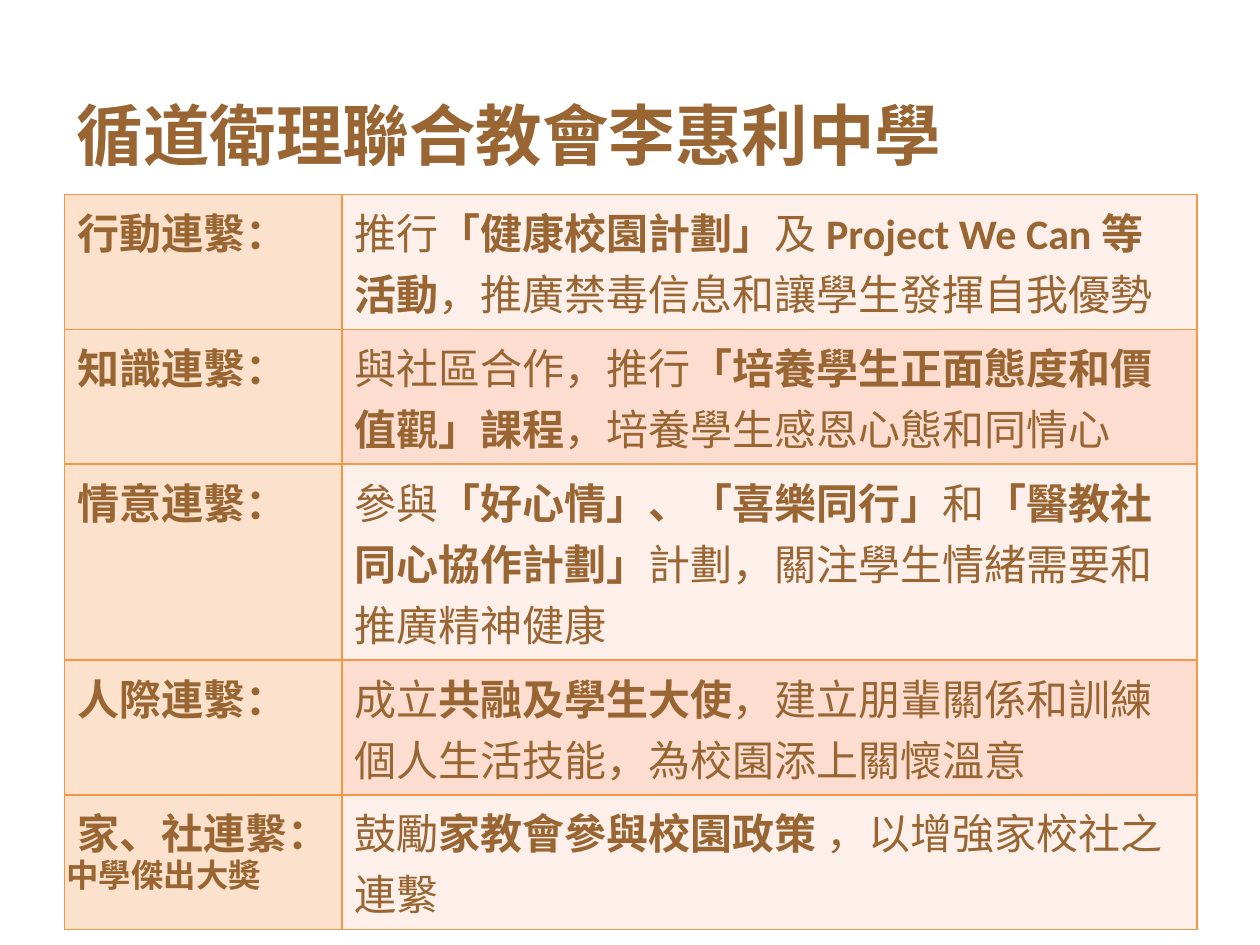
from pptx import Presentation
from pptx.dml.color import RGBColor
from pptx.enum.text import MSO_ANCHOR as Anchor
from pptx.oxml import parse_xml
from pptx.oxml.ns import nsdecls
from pptx.util import Pt

BROWN, ORANGE = "996633", "F79646"
LABEL_FILL, ROW_FILLS = "FCE2CC", ("FDEFE9", "FCDDCF")


def color(value):
    return RGBColor.from_string(value)


def write(frame, text, size=24, bold=False, anchor=Anchor.TOP, wrap=True):
    """Write one paragraph; each * in the text switches bold on or off."""
    frame.word_wrap = wrap
    frame.vertical_anchor = anchor
    para = frame.paragraphs[0]
    for part in text.split("*"):
        if part:
            span = para.add_run()
            span.text = part
            span.font.name = "Calibri"
            span.font.size = Pt(size)
            span.font.bold = bold
            span.font.color.rgb = color(BROWN)
        bold = not bold


deck = Presentation()
deck.slide_width, deck.slide_height = Pt(720), Pt(540)
slide = deck.slides.add_slide(deck.slide_layouts[6])

# Title
title = slide.shapes.add_textbox(Pt(36.7), Pt(31.7), Pt(648), Pt(90))
write(title.text_frame, "循道衛理聯合教會李惠利中學",
      size=38, bold=True, anchor=Anchor.MIDDLE)

# Table of connections: label, description, row height
rows = [
    ("行動連繫：",
     "推行*「健康校園計劃」*及 *Project We Can 等活動*，推廣禁毒信息和讓學生發揮自我優勢", 77),
    ("知識連繫：",
     "與社區合作，推行*「培養學生正面態度和價值觀」課程*，培養學生感恩心態和同情心", 77),
    ("情意連繫：",
     "參與*「好心情」、「喜樂同行」*和*「醫教社同心協作計劃」*計劃，關注學生情緒需要和推廣精神健康", 112),
    ("人際連繫：",
     "成立*共融及學生大使*，建立朋輩關係和訓練個人生活技能，為校園添上關懷溫意", 77),
    ("家、社連繫：",
     "鼓勵*家教會參與校園政策 *，以增強家校社之連繫", 77),
]
widths = (158.6, 488.4)
total_height = sum(height for _, _, height in rows)
table = slide.shapes.add_table(len(rows), 2, Pt(36.9), Pt(111.3),
                               Pt(sum(widths)), Pt(total_height)).table
for column, width in zip(table.columns, widths):
    column.width = Pt(width)

for index, (label, description, height) in enumerate(rows):
    table.rows[index].height = Pt(height)
    fills = (LABEL_FILL, ROW_FILLS[index % 2])
    for column, text in enumerate((label, description)):
        cell = table.cell(index, column)
        write(cell.text_frame, text, bold=column == 0)
        # Borders come before the fill in the cell properties
        properties = cell._tc.get_or_add_tcPr()
        for side in ("lnL", "lnR", "lnT", "lnB"):
            properties.append(parse_xml(
                f'<a:{side} {nsdecls("a")} w="{Pt(1)}"><a:solidFill>'
                f'<a:srgbClr val="{ORANGE}"/></a:solidFill></a:{side}>'))
        cell.fill.solid()
        cell.fill.fore_color.rgb = color(fills[column])

# Award caption
caption = slide.shapes.add_textbox(Pt(31), Pt(485.3), Pt(134), Pt(30))
write(caption.text_frame, "中學傑出大奬", size=18.5, bold=True, wrap=False)

deck.save("out.pptx")
